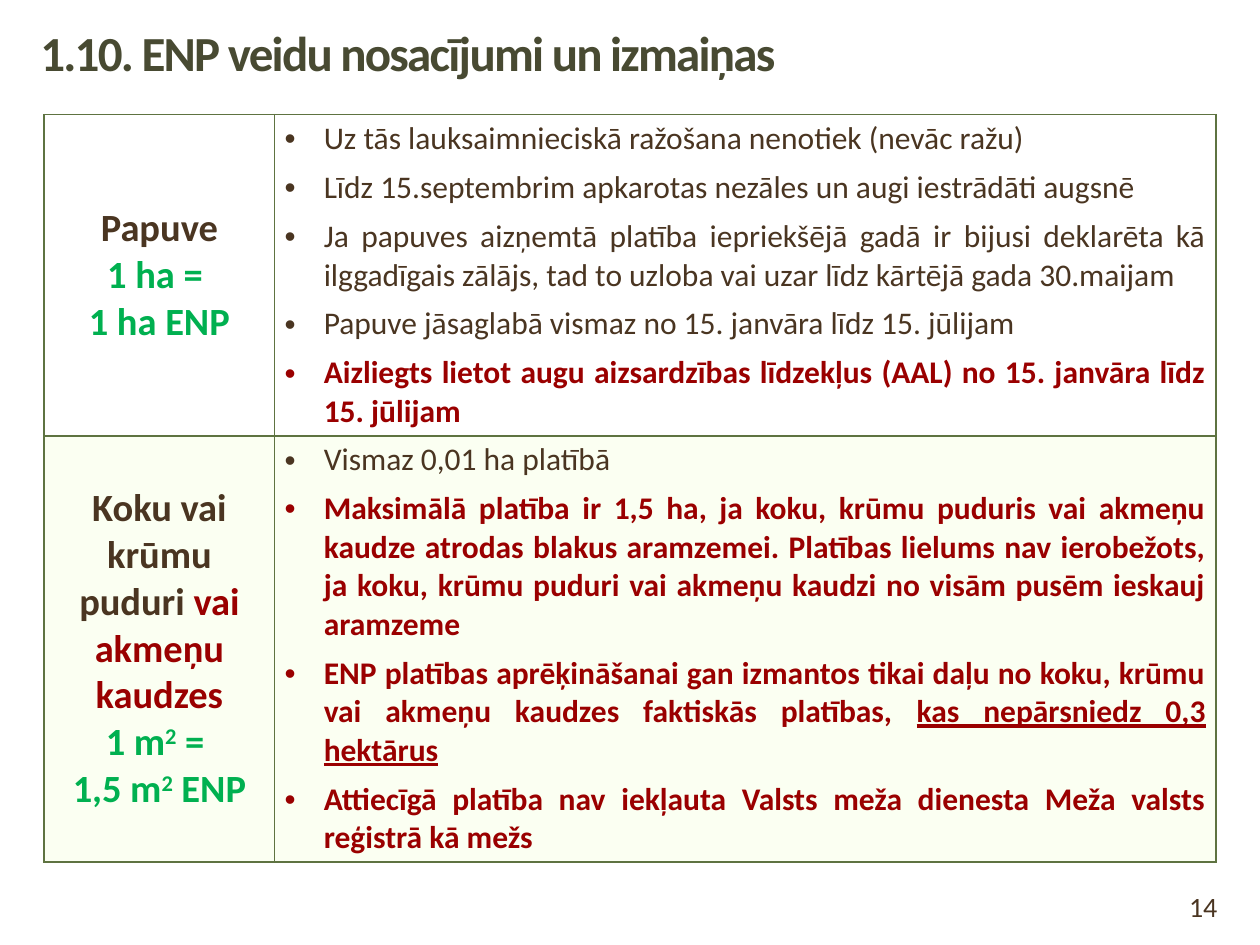
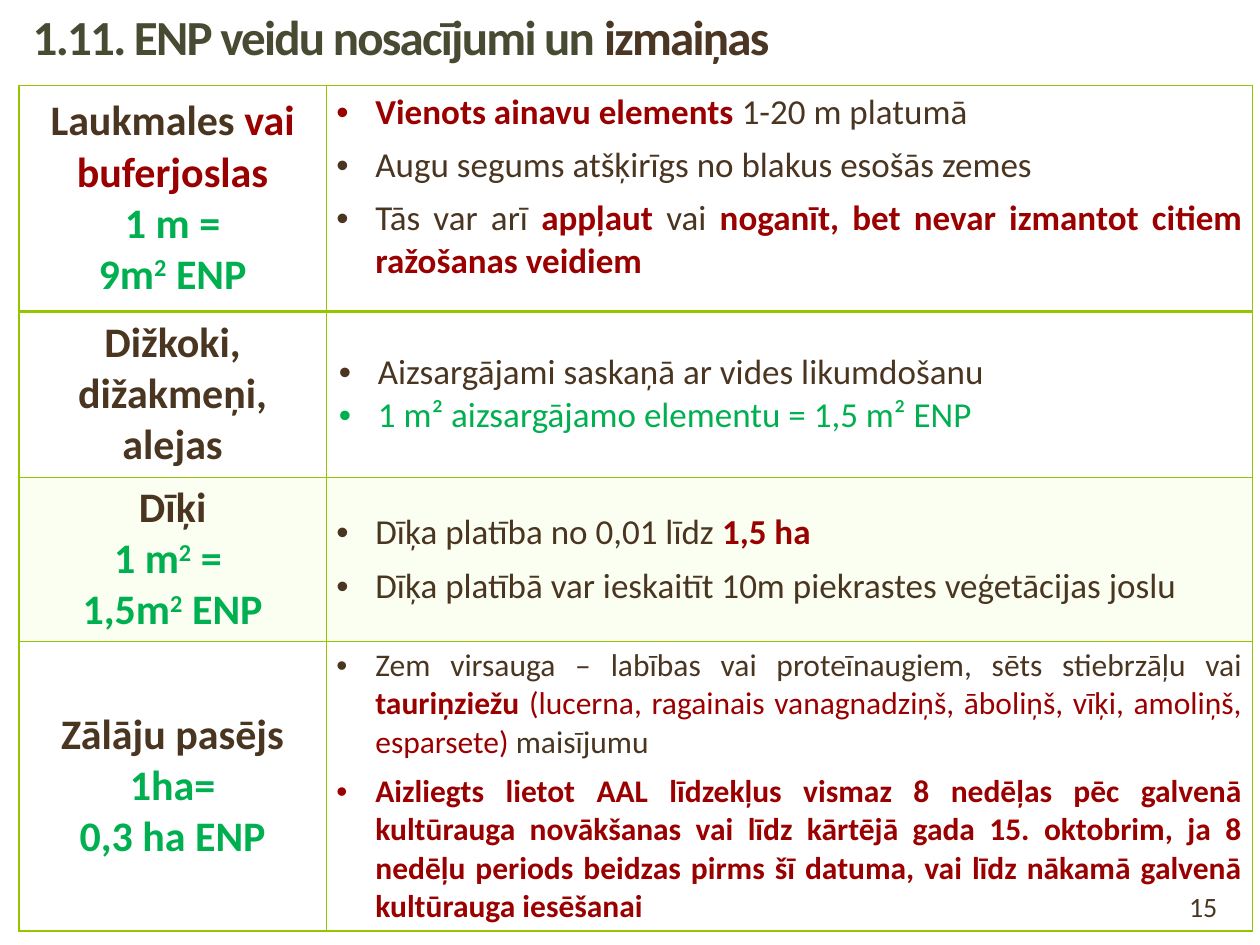
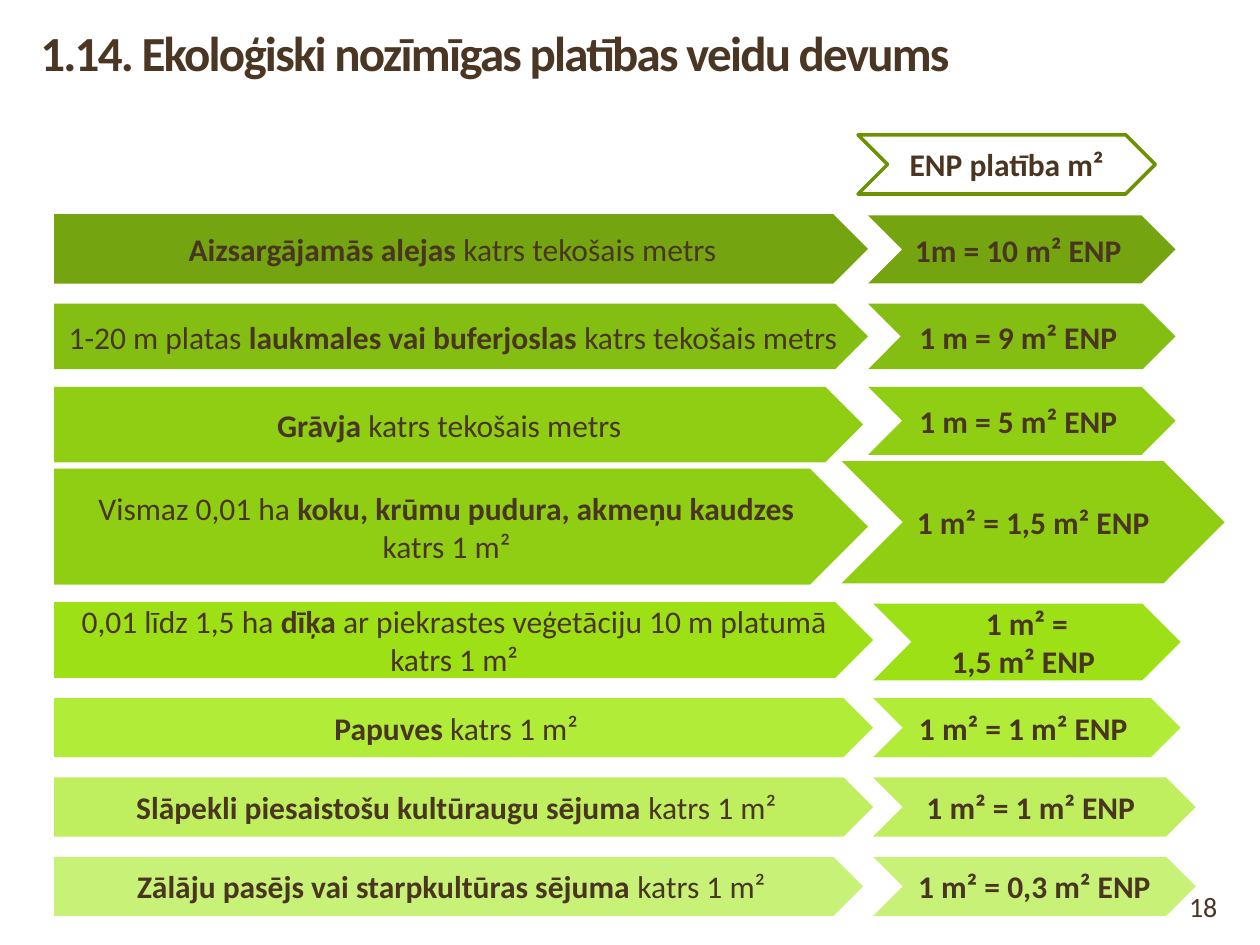
from dataclasses import dataclass

from lxml import etree
from pptx import Presentation
from pptx.dml.color import RGBColor
from pptx.enum.shapes import MSO_SHAPE
from pptx.enum.text import MSO_ANCHOR, MSO_AUTO_SIZE, PP_ALIGN
from pptx.oxml.ns import qn
from pptx.util import Inches, Pt

# Shared look
FONT = "Calibri"
BROWN = RGBColor(0x4A, 0x35, 0x21)
TITLE_BROWN = RGBColor(0x4A, 0x36, 0x22)
TITLE_OLIVE = RGBColor(0x48, 0x4A, 0x32)
RED = RGBColor(0x9A, 0x00, 0x00)
GREEN = RGBColor(0x00, 0xB0, 0x50)
PALE_LIME = RGBColor(0xEF, 0xFF, 0xC1)
OLIVE_LINE = RGBColor(0x5E, 0x73, 0x41)
LIME_LINE = RGBColor(0x94, 0xC6, 0x00)
HEADER_LINE = RGBColor(0x6D, 0x92, 0x00)
LEAF_1 = RGBColor(0x74, 0xA5, 0x10)
LEAF_2 = RGBColor(0x85, 0xBE, 0x12)
LEAF_3 = RGBColor(0x90, 0xCE, 0x14)
LEAF_4 = RGBColor(0x9D, 0xE0, 0x16)
LEAF_5 = RGBColor(0xB0, 0xEC, 0x38)
LEAF_6 = RGBColor(0xBF, 0xEF, 0x5F)
LEAF_7 = RGBColor(0xC8, 0xF1, 0x77)

CENTER, JUSTIFY, LEFT = PP_ALIGN.CENTER, PP_ALIGN.JUSTIFY, PP_ALIGN.LEFT
TOP, MIDDLE = MSO_ANCHOR.TOP, MSO_ANCHOR.MIDDLE
PLATE, CHEVRON = MSO_SHAPE.PENTAGON, MSO_SHAPE.CHEVRON
BRACKETS = MSO_SHAPE.DOUBLE_BRACKET
NO_AUTOFIT = MSO_AUTO_SIZE.NONE
TITLE_ONLY = 5


@dataclass(frozen=True)
class Span:
    text: str
    color: RGBColor = BROWN
    bold: bool = False
    raised: bool = False
    underline: bool = False


Line = tuple[Span, ...]


@dataclass(frozen=True)
class TableRow:
    height: float
    label: tuple[Line, ...]
    items: tuple[Line, ...]
    item_size: int = 18
    anchor: MSO_ANCHOR = MIDDLE
    gap: int = 6
    tint: RGBColor | None = None
    bottom_line: int = 1
    margins: tuple[float, float] = (0.08, 0.04)


@dataclass(frozen=True)
class Place:
    left: float
    top: float
    width: float
    height: float


@dataclass(frozen=True)
class Contribution:
    color: RGBColor
    plate: Place
    label: Line
    chevron: Place
    value: tuple[str, ...]


def strong(text: str, color: RGBColor = BROWN) -> Span:
    return Span(text, color, bold=True)


def plain(text: str) -> Line:
    return (Span(text),)


def warning(text: str) -> Line:
    return (strong(text, RED),)


def ratio(text: str) -> Line:
    """Bold green line; a caret marks the raised 2."""
    before, caret, after = text.partition("^2")
    if not caret:
        return (strong(text, GREEN),)
    return (strong(before, GREEN), Span("2", GREEN, True, raised=True), strong(after, GREEN))


# Text
def add_bullet(paragraph) -> None:
    properties = paragraph._p.get_or_add_pPr()
    properties.set("marL", str(Inches(0.31)))
    properties.set("indent", str(-Inches(0.31)))
    etree.SubElement(properties, qn("a:buFont")).set("typeface", "Arial")
    etree.SubElement(properties, qn("a:buChar")).set("char", "•")


def write_lines(frame, lines: tuple[Line, ...], size: int, align: PP_ALIGN = CENTER,
                bullets: bool = False, gap: int = 0, spacing: int = 0) -> None:
    for index, line in enumerate(lines):
        paragraph = frame.add_paragraph() if index else frame.paragraphs[0]
        paragraph.alignment = align
        paragraph.space_before = Pt(0)
        paragraph.space_after = Pt(gap)
        if bullets:
            add_bullet(paragraph)
        first = line[0]
        font = paragraph.font
        font.name, font.size, font.bold = FONT, Pt(size), first.bold
        font.color.rgb = first.color
        for span in line:
            run = paragraph.add_run()
            run.text = span.text
            if span.color != first.color:
                run.font.color.rgb = span.color
            if span.bold != first.bold:
                run.font.bold = span.bold
            if span.underline:
                run.font.underline = True
            if span.raised:
                run._r.get_or_add_rPr().set("baseline", "30000")
            if spacing:
                run._r.get_or_add_rPr().set("spc", str(spacing))


# Shapes
def add_box(page, kind: MSO_SHAPE, place: Place, lines: tuple[Line, ...], size: int = 18,
            fill: RGBColor | None = None, outline: RGBColor | None = None):
    box = page.shapes.add_shape(kind, Inches(place.left), Inches(place.top),
                                Inches(place.width), Inches(place.height))
    box.shadow.inherit = False
    if fill is None:
        box.fill.background()
    else:
        box.fill.solid()
        box.fill.fore_color.rgb = fill
    if outline is None:
        box.line.fill.background()
    else:
        box.line.color.rgb = outline
        box.line.width = Pt(2)
    box.text_frame.word_wrap = True
    box.text_frame.vertical_anchor = MIDDLE
    write_lines(box.text_frame, lines, size)
    return box


def add_page(deck, number: int, title: Line, place: Place):
    page = deck.slides.add_slide(deck.slide_layouts[TITLE_ONLY])
    heading = page.shapes.title
    heading.left, heading.top = Inches(place.left), Inches(place.top)
    heading.width, heading.height = Inches(place.width), Inches(place.height)
    frame = heading.text_frame
    frame.auto_size = NO_AUTOFIT
    frame.word_wrap = True
    frame.vertical_anchor = TOP
    write_lines(frame, (title,), 28, LEFT, spacing=-100)
    return page


def add_page_number(page, number: int) -> None:
    add_box(page, BRACKETS, Place(9.25, 6.98, 0.6, 0.43), (plain(str(number)),), 16)


# Tables
def style_cell(cell, row: TableRow, line_color: RGBColor, top_line: int) -> None:
    properties = cell._tc.get_or_add_tcPr()
    widths = {"a:lnL": 1, "a:lnR": 1, "a:lnT": top_line, "a:lnB": row.bottom_line}
    for edge, width in widths.items():
        border = etree.SubElement(properties, qn(edge), w=str(Pt(width)))
        paint = etree.SubElement(border, qn("a:solidFill"))
        etree.SubElement(paint, qn("a:srgbClr"), val=str(line_color))
    if row.tint is None:
        cell.fill.background()
    else:
        cell.fill.solid()
        cell.fill.fore_color.rgb = row.tint
        color = properties.find(qn("a:solidFill")).find(qn("a:srgbClr"))
        etree.SubElement(color, qn("a:alpha"), val="20000")
    side, end = row.margins
    cell.margin_left = cell.margin_right = Inches(side)
    cell.margin_top = cell.margin_bottom = Inches(end)


def add_conditions(page, left: float, top: float, widths: tuple[float, float],
                   rows: tuple[TableRow, ...], line_color: RGBColor, label_size: int) -> None:
    height = sum(row.height for row in rows)
    table = page.shapes.add_table(len(rows), 2, Inches(left), Inches(top),
                                  Inches(sum(widths)), Inches(height)).table
    table.first_row = table.horz_banding = False
    for column, width in zip(table.columns, widths):
        column.width = Inches(width)
    top_line = 1
    for index, row in enumerate(rows):
        table.rows[index].height = Inches(row.height)
        label, items = table.cell(index, 0), table.cell(index, 1)
        for cell in (label, items):
            style_cell(cell, row, line_color, top_line)
        label.vertical_anchor, items.vertical_anchor = MIDDLE, row.anchor
        write_lines(label.text_frame, row.label, label_size)
        write_lines(items.text_frame, row.items, row.item_size, JUSTIFY, True, row.gap)
        top_line = row.bottom_line


# Content
FALLOW_AND_GROVES = (
    TableRow(
        2.51,
        ((strong("Papuve"),), ratio("1 ha = "), ratio("1 ha ENP")),
        (
            plain("Uz tās lauksaimnieciskā ražošana nenotiek (nevāc ražu)"),
            plain("Līdz 15.septembrim apkarotas nezāles un augi iestrādāti augsnē"),
            plain("Ja papuves aizņemtā platība iepriekšējā gadā ir bijusi deklarēta kā "
                  "ilggadīgais zālājs, tad to uzloba vai uzar līdz kārtējā gada 30.maijam"),
            plain("Papuve jāsaglabā vismaz no 15. janvāra līdz 15. jūlijam"),
            warning("Aizliegts lietot augu aizsardzības līdzekļus (AAL) no 15. janvāra "
                    "līdz 15. jūlijam"),
        ),
        anchor=TOP,
    ),
    TableRow(
        3.32,
        ((strong("Koku vai krūmu puduri "), strong("vai akmeņu kaudzes", RED)),
         ratio("1 m^2 = "), ratio("1,5 m^2 ENP")),
        (
            plain("Vismaz 0,01 ha platībā"),
            warning("Maksimālā platība ir 1,5 ha, ja koku, krūmu puduris vai akmeņu kaudze "
                    "atrodas blakus aramzemei. Platības lielums nav ierobežots, ja koku, "
                    "krūmu puduri vai akmeņu kaudzi no visām pusēm ieskauj aramzeme"),
            (strong("ENP platības aprēķināšanai gan izmantos tikai daļu no koku, krūmu vai "
                    "akmeņu kaudzes faktiskās platības, ", RED),
             Span("kas nepārsniedz 0,3 hektārus", RED, True, underline=True)),
            warning("Attiecīgā platība nav iekļauta Valsts meža dienesta Meža valsts "
                    "reģistrā kā mežs"),
        ),
        anchor=TOP, tint=PALE_LIME,
    ),
)

MARGINS_TO_GRASS = (
    TableRow(
        1.79,
        ((strong("Laukmales "), strong("vai buferjoslas", RED)),
         ratio("1 m ="), ratio("9m^2 ENP")),
        (
            (strong("Vienots ainavu elements ", RED), Span("1-20 m platumā")),
            plain("Augu segums atšķirīgs no blakus esošās zemes"),
            (Span("Tās var arī "), strong("appļaut ", RED), Span("vai "),
             strong("noganīt, bet nevar izmantot citiem ražošanas veidiem", RED)),
        ),
        item_size=20, anchor=TOP, bottom_line=2,
    ),
    TableRow(
        1.3,
        ((strong("Dižkoki, dižakmeņi, alejas"),),),
        (plain("Aizsargājami saskaņā ar vides likumdošanu"),
         (Span("1 m² aizsargājamo elementu = 1,5 m² ENP", GREEN),)),
        item_size=20, gap=0, margins=(0.1, 0.05),
    ),
    TableRow(
        1.28,
        ((strong("Dīķi"),), ratio("1 m^2 = "), ratio("1,5m^2 ENP")),
        ((Span("Dīķa platība no 0,01 līdz "), strong("1,5 ha ", RED)),
         plain("Dīķa platībā var ieskaitīt 10m piekrastes veģetācijas joslu")),
        item_size=20, tint=PALE_LIME,
    ),
    TableRow(
        2.26,
        ((strong("Zālāju pasējs"),), ratio("1ha="), ratio("0,3 ha ENP")),
        (
            (Span("Zem virsauga – labības vai proteīnaugiem, sēts stiebrzāļu vai "),
             strong("tauriņziežu ", RED),
             Span("(lucerna, ragainais vanagnadziņš, āboliņš, vīķi, amoliņš, esparsete) ", RED),
             Span("maisījumu")),
            warning("Aizliegts lietot AAL līdzekļus vismaz 8 nedēļas pēc galvenā kultūrauga "
                    "novākšanas vai līdz kārtējā gada 15. oktobrim, ja 8 nedēļu periods "
                    "beidzas pirms šī datuma, vai līdz nākamā galvenā kultūrauga iesēšanai"),
        ),
    ),
)

PLATE_LEFT = 0.43
CONTRIBUTIONS = (
    Contribution(LEAF_1, Place(PLATE_LEFT, 1.7, 6.46, 0.55),
                 (strong("Aizsargājamās alejas "), Span("katrs tekošais metrs")),
                 Place(6.89, 1.71, 2.44, 0.54), ("1m = 10 m² ENP ",)),
    Contribution(LEAF_2, Place(PLATE_LEFT, 2.41, 6.46, 0.52),
                 (Span("1-20 m platas "), strong("laukmales vai buferjoslas "),
                  Span("katrs tekošais metrs")),
                 Place(6.89, 2.41, 2.44, 0.52), ("1 m = 9 m² ENP ",)),
    Contribution(LEAF_3, Place(PLATE_LEFT, 3.07, 6.42, 0.6),
                 (strong("Grāvja "), Span("katrs tekošais metrs")),
                 Place(6.89, 3.07, 2.44, 0.54), ("1 m = 5 m² ENP ",)),
    Contribution(LEAF_3, Place(PLATE_LEFT, 3.72, 6.46, 0.92),
                 (Span("Vismaz 0,01 ha "), strong("koku, krūmu pudura, akmeņu kaudzes "),
                  Span("katrs 1 m²")),
                 Place(6.68, 3.66, 3.04, 0.97), ("1 m² = 1,5 m² ENP",)),
    Contribution(LEAF_4, Place(PLATE_LEFT, 4.78, 6.5, 0.6),
                 (Span("0,01 līdz 1,5 ha "), strong("dīķa "),
                  Span("ar piekrastes veģetāciju 10 m platumā katrs 1 m²")),
                 Place(6.93, 4.79, 2.44, 0.61), ("1 m² =", "1,5 m² ENP ")),
    Contribution(LEAF_5, Place(PLATE_LEFT, 5.54, 6.5, 0.47),
                 (strong("Papuves "), Span("katrs 1 m²")),
                 Place(6.93, 5.54, 2.44, 0.47), ("1 m² = 1 m² ENP ",)),
    Contribution(LEAF_6, Place(PLATE_LEFT, 6.17, 6.5, 0.47),
                 (strong("Slāpekli piesaistošu kultūraugu sējuma "), Span("katrs 1 m²")),
                 Place(6.93, 6.17, 2.56, 0.47), ("1 m² = 1 m² ENP ",)),
    Contribution(LEAF_7, Place(PLATE_LEFT, 6.8, 6.42, 0.47),
                 (strong("Zālāju pasējs vai starpkultūras sējuma "), Span("katrs 1 m²")),
                 Place(6.93, 6.8, 2.56, 0.47), ("1 m² = 0,3 m² ENP ",)),
)


def main() -> None:
    deck = Presentation()
    deck.slide_width, deck.slide_height = Inches(10), Inches(7.5)

    # Fallow land and groves
    page = add_page(deck, 14, (strong("1.10. ENP veidu nosacījumi un izmaiņas", TITLE_OLIVE),),
                    Place(0.22, 0.13, 9.58, 0.78))
    add_conditions(page, 0.35, 0.91, (1.83, 7.47), FALLOW_AND_GROVES, OLIVE_LINE, 22)
    add_page_number(page, 14)

    # Field margins, trees, ponds and grass
    page = add_page(deck, 15, (strong("1.11. ENP veidu nosacījumi un ", TITLE_OLIVE),
                               strong("izmaiņas", TITLE_BROWN)),
                    Place(0.16, 0, 9.58, 0.79))
    add_conditions(page, 0.15, 0.68, (2.44, 7.35), MARGINS_TO_GRASS, LIME_LINE, 24)
    add_page_number(page, 15)

    # Contribution of each area type
    page = add_page(deck, 18, (strong("1.14. Ekoloģiski nozīmīgas platības veidu devums",
                                      TITLE_BROWN),),
                    Place(0.22, 0.13, 8.58, 0.78))
    add_box(page, CHEVRON, Place(6.81, 1.07, 2.36, 0.47), ((strong("ENP platība m²"),),),
            outline=HEADER_LINE)
    for entry in CONTRIBUTIONS:
        add_box(page, PLATE, entry.plate, (entry.label,), fill=entry.color)
        value = tuple((strong(text),) for text in entry.value)
        add_box(page, CHEVRON, entry.chevron, value, fill=entry.color)
    add_page_number(page, 18)

    deck.save("out.pptx")


if __name__ == "__main__":
    main()
